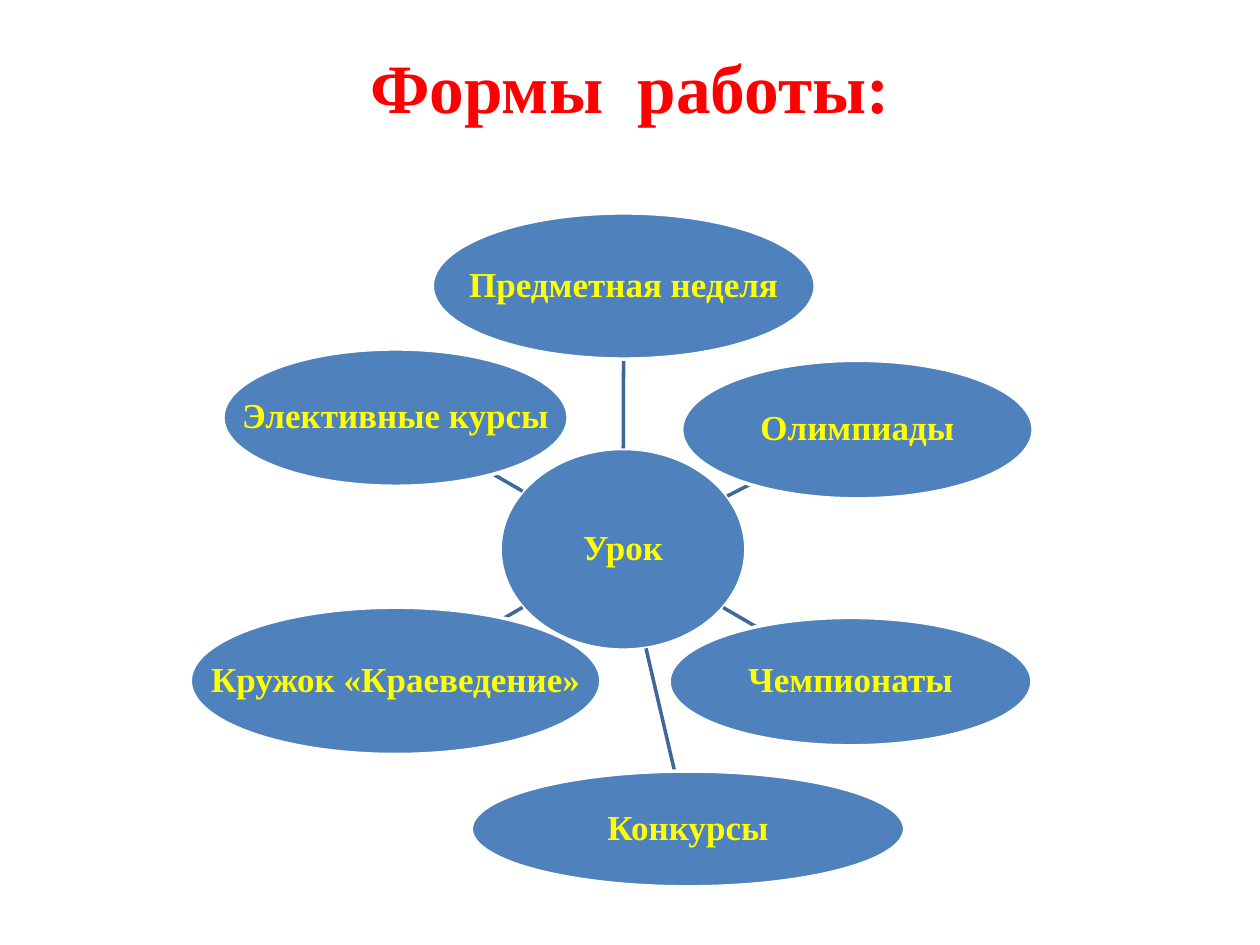
from collections import namedtuple
from math import hypot

from lxml.etree import SubElement
from pptx import Presentation
from pptx.dml.color import RGBColor
from pptx.enum.shapes import MSO_CONNECTOR, MSO_SHAPE
from pptx.enum.text import MSO_ANCHOR, MSO_AUTO_SIZE, PP_ALIGN
from pptx.oxml.ns import qn
from pptx.util import Pt

Box = namedtuple("Box", "left top width height")

FONT = "Times New Roman"
COLOURS = {
    "title": "FF0000",
    "label": "FFFF00",
    "oval": "4F81BD",
    "outline": "FFFFFF",
    "spoke": "3F6797",
}

HUB = ("Урок", Box(285.8, 256.3, 140.4, 115.2))
FORMS = [
    ("Предметная неделя", Box(247, 121.7, 218.9, 83.5)),
    ("Олимпиады", Box(389.5, 205.9, 200.9, 79.2)),
    ("Чемпионаты", Box(382.3, 352.8, 207.4, 73.4)),
    ("Конкурсы", Box(269.3, 440.6, 247.7, 66.2)),
    ("Кружок «Краеведение»", Box(108.7, 347, 234.7, 84.2)),
    ("Элективные курсы", Box(127.4, 199.4, 197.3, 78.5)),
]


def colour(name):
    return RGBColor.from_string(COLOURS[name])


def write_line(frame, text, size, colour_name):
    frame.vertical_anchor = MSO_ANCHOR.MIDDLE
    para = frame.paragraphs[0]
    para.alignment = PP_ALIGN.CENTER
    span = para.add_run()
    span.text = text
    span.font.name = FONT
    span.font.size = Pt(size)
    span.font.bold = True
    span.font.color.rgb = colour(colour_name)
    return para


def add_title(page, box, text):
    title = page.shapes.title
    title.left, title.top, title.width, title.height = map(Pt, box)
    title.text_frame.auto_size = MSO_AUTO_SIZE.NONE
    write_line(title.text_frame, text, 39.6, "title")


def add_oval(page, box, text):
    oval = page.shapes.add_shape(MSO_SHAPE.OVAL, *map(Pt, box))
    oval.shadow.inherit = False
    oval.fill.solid()
    oval.fill.fore_color.rgb = colour("oval")
    oval.line.color.rgb = colour("outline")
    oval.line.width = Pt(2)
    frame = oval.text_frame
    frame.word_wrap = False
    frame.margin_left = frame.margin_right = Pt(1)
    frame.margin_top = frame.margin_bottom = Pt(1)
    write_line(frame, text, 20, "label").line_spacing = 0.9


def centre(box):
    return box.left + box.width / 2, box.top + box.height / 2


def edge_point(box, target):
    """Return where the line from the oval's centre to target leaves the oval."""
    x, y = centre(box)
    run, rise = target[0] - x, target[1] - y
    reach = 1 / hypot(run / (box.width / 2), rise / (box.height / 2))
    return x + run * reach, y + rise * reach


def add_spoke(page, hub, box):
    start = edge_point(hub, centre(box))
    end = edge_point(box, centre(hub))
    spoke = page.shapes.add_connector(MSO_CONNECTOR.STRAIGHT, *map(Pt, start + end))
    spoke.line.color.rgb = colour("spoke")
    spoke.line.width = Pt(2)
    SubElement(spoke._element.spPr, qn("a:effectLst"))


def add_radial_diagram(page, hub, forms):
    hub_text, hub_box = hub
    add_oval(page, hub_box, hub_text)
    for text, box in forms:
        add_spoke(page, hub_box, box)
        add_oval(page, box, text)


def main():
    deck = Presentation()
    deck.slide_width, deck.slide_height = Pt(720), Pt(540)
    page = deck.slides.add_slide(deck.slide_layouts.get_by_name("Title Only"))
    add_title(page, Box(36, 21.6, 648, 55.4), "Формы  работы:")
    add_radial_diagram(page, HUB, FORMS)
    deck.save("out.pptx")


if __name__ == "__main__":
    main()
